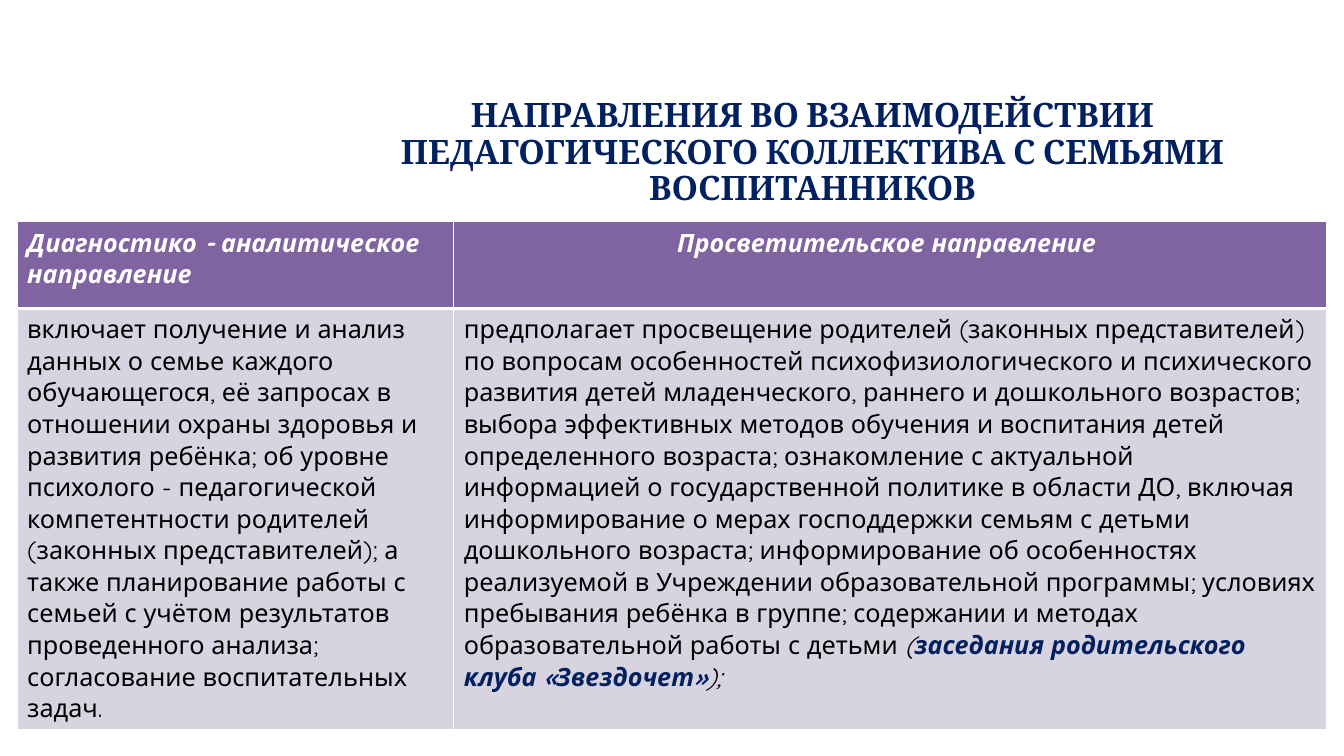
import pptx
import pptx.util
import pptx.dml.color
import pptx.enum.text
import pptx.oxml.ns
from dataclasses import dataclass
from lxml import etree

ALIGN = pptx.enum.text.PP_ALIGN


@dataclass(frozen=True)
class Theme:
    navy: str = "002060"
    purple: str = "8064A2"
    lilac: str = "D8D3E0"
    white: str = "FFFFFF"
    black: str = "000000"
    title_font: str = "Cambria"
    body_font: str = "Quicksand"
    title_size: int = 24
    body_size: int = 18


THEME = Theme()
WIDTH, HEIGHT = 13.33, 7.5

# Slide wording
TITLE = ("НАПРАВЛЕНИЯ ВО ВЗАИМОДЕЙСТВИИ ПЕДАГОГИЧЕСКОГО КОЛЛЕКТИВА "
         "С СЕМЬЯМИ ВОСПИТАННИКОВ")
DIAGNOSTIC_HEADING = "Диагностико - аналитическое направление"
EDUCATION_HEADING = "Просветительское направление "
DIAGNOSTIC_TEXT = (
    "включает получение и анализ данных о семье каждого обучающегося, её запросах "
    "в отношении охраны здоровья и развития ребёнка; об уровне психолого - "
    "педагогической компетентности родителей (законных представителей); а также "
    "планирование работы с семьей с учётом результатов проведенного анализа; "
    "согласование воспитательных задач.")
EDUCATION_TEXT = (
    "предполагает просвещение родителей (законных представителей) по вопросам "
    "особенностей психофизиологического и психического развития детей младенческого, "
    "раннего и дошкольного возрастов; выбора эффективных методов обучения и "
    "воспитания детей определенного возраста; ознакомление с актуальной информацией "
    "о государственной политике в области ДО, включая информирование о мерах "
    "господдержки семьям с детьми дошкольного возраста; информирование об "
    "особенностях реализуемой в Учреждении образовательной программы; условиях "
    "пребывания ребёнка в группе; содержании и методах образовательной работы с детьми ")
CLUB_MEETINGS = "заседания родительского клуба «Звездочет»"


def rgb(color):
    return pptx.dml.color.RGBColor.from_string(color)


def add_text(paragraph, text, font=THEME.body_font, size=THEME.body_size,
             color=THEME.black, bold=False, italic=False):
    run = paragraph.add_run()
    run.text = text
    run.font.name = font
    run.font.size = pptx.util.Pt(size)
    run.font.color.rgb = rgb(color)
    run.font.bold = bold
    run.font.italic = italic


def set_borders(cell, color, widths):
    """Draw cell borders; widths are points for left, right, top and bottom."""
    properties = cell._tc.get_or_add_tcPr()
    for index, (side, width) in enumerate(zip("LRTB", widths)):
        line = etree.Element(pptx.oxml.ns.qn(f"a:ln{side}"), w=str(pptx.util.Pt(width)))
        fill = etree.SubElement(line, pptx.oxml.ns.qn("a:solidFill"))
        etree.SubElement(fill, pptx.oxml.ns.qn("a:srgbClr"), val=color)
        properties.insert(index, line)


def add_title(slide, box):
    shape = slide.shapes.add_textbox(*map(pptx.util.Inches, box))
    frame = shape.text_frame
    frame.word_wrap = True
    frame.vertical_anchor = pptx.enum.text.MSO_ANCHOR.BOTTOM
    paragraph = frame.paragraphs[0]
    paragraph.alignment = ALIGN.CENTER
    paragraph.line_spacing = 0.9
    add_text(paragraph, TITLE, font=THEME.title_font, size=THEME.title_size,
             color=THEME.navy, bold=True)


def add_directions_table(slide, box):
    left, top, width, height = box
    table = slide.shapes.add_table(2, 2, *map(pptx.util.Inches, box)).table

    # The right column is twice as wide as the left one
    for column, share in zip(table.columns, (1 / 3, 2 / 3)):
        column.width = pptx.util.Inches(width * share)
    # The body row is tall enough for all thirteen lines of the left cell
    header_height = 0.86
    for row, row_height in zip(table.rows, (header_height, height - header_height)):
        row.height = pptx.util.Inches(row_height)

    # Each cell lists its runs as text and format
    heading = dict(color=THEME.white, bold=True, italic=True)
    rows = [
        [[(DIAGNOSTIC_HEADING, heading)], [(EDUCATION_HEADING, heading)]],
        [[(DIAGNOSTIC_TEXT, {})],
         [(EDUCATION_TEXT, {}),
          ("(", dict(italic=True)),
          (CLUB_MEETINGS, dict(color=THEME.navy, bold=True, italic=True)),
          (");", dict(italic=True))]],
    ]
    styles = [(THEME.purple, (1, 1, 1, 3)), (THEME.lilac, (1, 1, 3, 1))]
    for row_index, (contents, (fill, widths)) in enumerate(zip(rows, styles)):
        for column_index, runs in enumerate(contents):
            cell = table.cell(row_index, column_index)
            cell.fill.solid()
            cell.fill.fore_color.rgb = rgb(fill)
            set_borders(cell, THEME.white, widths)
            for text, style in runs:
                add_text(cell.text_frame.paragraphs[0], text, **style)
    table.cell(0, 1).text_frame.paragraphs[0].alignment = ALIGN.CENTER


def main():
    presentation = pptx.Presentation()
    presentation.slide_width = pptx.util.Inches(WIDTH)
    presentation.slide_height = pptx.util.Inches(HEIGHT)
    slide = presentation.slides.add_slide(presentation.slide_layouts[6])

    # Title at the upper right, table across the rest
    margin = 0.17
    table_top, table_bottom = 2.2, 7.24
    add_title(slide, (3.26, 0.36, WIDTH * 0.72, 1.75))
    add_directions_table(
        slide, (margin, table_top, WIDTH - 2 * margin, table_bottom - table_top))

    presentation.save("out.pptx")


if __name__ == "__main__":
    main()
